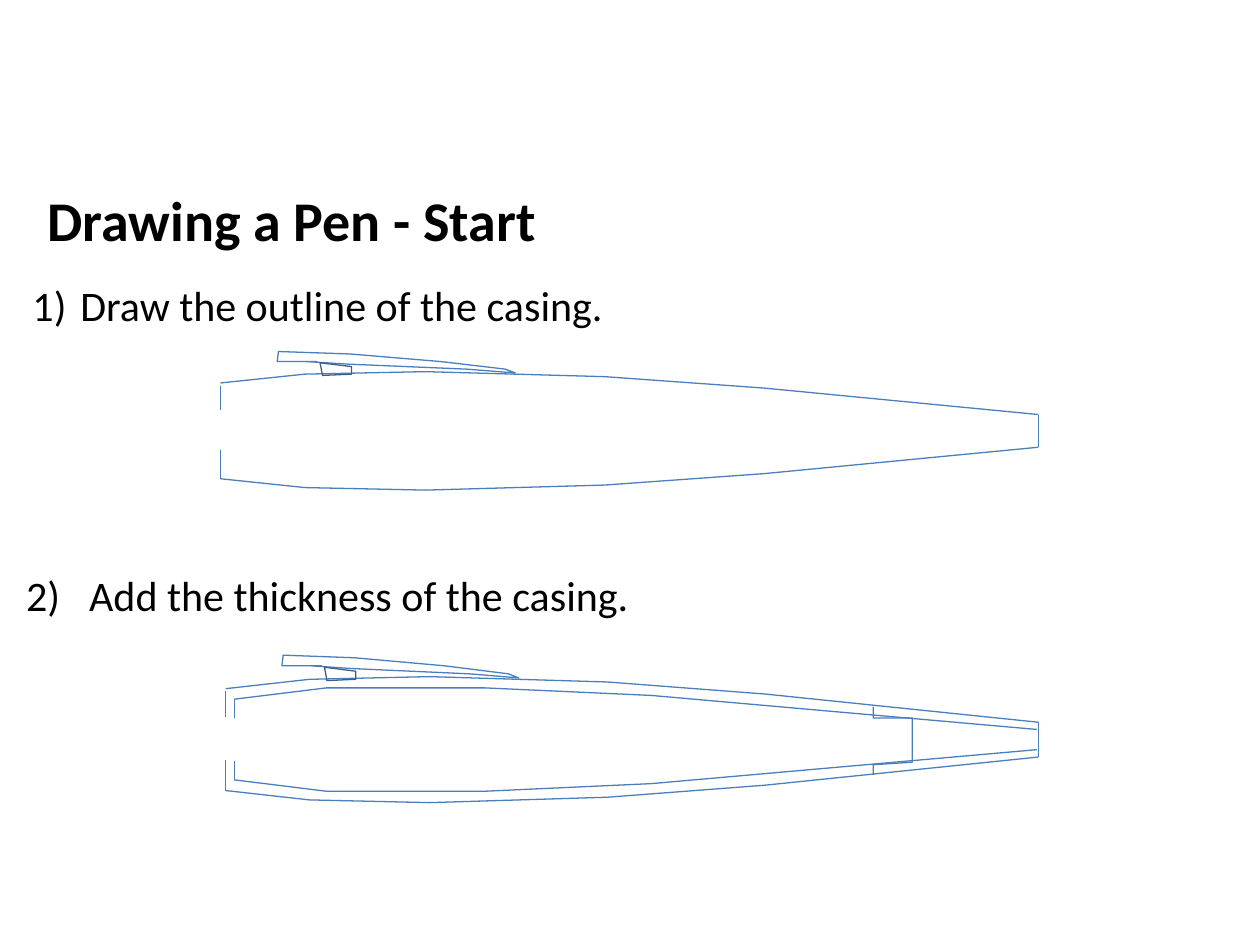
from dataclasses import dataclass

from lxml.etree import SubElement
from pptx import Presentation
from pptx.dml.color import RGBColor
from pptx.enum.shapes import MSO_CONNECTOR
from pptx.oxml.ns import qn
from pptx.util import Inches, Pt

FONT = "Calibri"
BLACK, CASING_BLUE, STUD_BLUE = "000000", "4B7EBC", "3A5F8C"
PEN_LENGTH, PEN_HEIGHT = 6.49, 0.94
Points = list[tuple[float, float]]

# Pen points in inches: x from the open end, y from the centre line.
OUTER_EDGE = [(0, -0.38), (0.67, -0.45), (1.63, -0.47), (3.05, -0.43), (4.31, -0.34), (6.49, -0.13)]
INNER_EDGE = [(0.07, -0.32), (0.8, -0.41), (2.06, -0.41), (3.38, -0.35), (6.44, -0.08)]
CLIP = [(0.68, -0.55), (1.01, -0.53), (1.95, -0.49), (2.34, -0.46), (2.26, -0.49),
        (1.75, -0.55), (1.03, -0.61), (0.46, -0.63), (0.45, -0.55), (0.77, -0.55)]
STUD = [(0.79, -0.54), (0.81, -0.44), (1.04, -0.45), (1.04, -0.51)]
OUTER_ENDS = [[(0, -0.36), (0, -0.17)], [(0, 0.15), (0, 0.38)], [(6.49, -0.13), (6.49, 0.13)]]
INNER_END = [(0.07, -0.32), (0.07, -0.17)]
TIP_INSERT = [(5.14, -0.26), (5.14, -0.17), (5.45, -0.17), (5.45, 0.18), (5.14, 0.2), (5.14, 0.28)]


@dataclass
class Frame:
    """Where a pen lies and how large it is, in inches."""
    left: float
    middle: float
    length: float = PEN_LENGTH
    height: float = PEN_HEIGHT

    def place(self, points: Points) -> list[tuple[int, int]]:
        return [(Inches(self.left + x * self.length / PEN_LENGTH),
                 Inches(self.middle + y * self.height / PEN_HEIGHT)) for x, y in points]


@dataclass
class Label:
    text: str
    left: float
    top: float
    width: float
    height: float
    size: int
    bold: bool = False
    number: int = 0
    indent: float = 0


LABELS = [
    Label("Drawing a Pen - Start", 0.28, 1.42, 7.09, 0.64, 32, bold=True),
    Label("Draw the outline of the casing.", 0.16, 2.17, 9.44, 0.5, 24, number=1, indent=0.38),
    Label("Add the thickness of the casing.", 0.11, 4.47, 9.43, 0.5, 24, number=2, indent=0.5),
]


def rgb(value: str) -> RGBColor:
    return RGBColor.from_string(value)


def mirrored(points: Points) -> Points:
    return [(x, -y) for x, y in points]


def add_label(slide, label: Label) -> None:
    box = slide.shapes.add_textbox(Inches(label.left), Inches(label.top),
                                   Inches(label.width), Inches(label.height))
    box.text_frame.word_wrap = True
    paragraph = box.text_frame.paragraphs[0]
    if label.number:
        paragraph.space_after = Pt(6)
        properties = paragraph._p.get_or_add_pPr()
        properties.set("marL", str(Inches(label.indent)))
        properties.set("indent", str(-Inches(label.indent)))
        SubElement(properties, qn("a:buFont"), typeface="+mj-lt")
        SubElement(properties, qn("a:buAutoNum"), type="arabicParenR", startAt=str(label.number))
    run = paragraph.add_run()
    run.text = label.text
    run.font.name = FONT
    run.font.size = Pt(label.size)
    run.font.bold = label.bold
    run.font.color.rgb = rgb(BLACK)


def style_line(shape, color: str) -> None:
    shape.line.color.rgb = rgb(color)
    shape.line.width = Pt(0.75)


def add_outline(slide, frame: Frame, points: Points, color: str = CASING_BLUE,
                close: bool = False) -> None:
    start, *rest = frame.place(points)
    builder = slide.shapes.build_freeform(*start)
    builder.add_line_segments(rest, close=close)
    shape = builder.convert_to_shape()
    shape.shadow.inherit = False
    shape.fill.background()
    style_line(shape, color)


def add_line(slide, frame: Frame, points: Points) -> None:
    start, end = frame.place(points)
    line = slide.shapes.add_connector(MSO_CONNECTOR.STRAIGHT, *start, *end)
    style_line(line, CASING_BLUE)
    SubElement(line._element.spPr, qn("a:effectLst"))


def add_pen(slide, frame: Frame) -> None:
    add_outline(slide, frame, OUTER_EDGE)
    add_outline(slide, frame, mirrored(OUTER_EDGE))
    add_outline(slide, frame, CLIP)
    add_outline(slide, frame, STUD, STUD_BLUE, close=True)
    for end in OUTER_ENDS:
        add_line(slide, frame, end)


def add_thickness(slide, frame: Frame) -> None:
    """Draw the inner wall of the casing and the insert at its tip."""
    for edge, end in ((INNER_EDGE, INNER_END), (mirrored(INNER_EDGE), mirrored(INNER_END))):
        add_outline(slide, frame, edge)
        add_line(slide, frame, end)
    add_outline(slide, frame, TIP_INSERT)


def main() -> None:
    presentation = Presentation()
    presentation.slide_width = Inches(10)
    presentation.slide_height = Inches(7.5)
    slide = presentation.slides.add_slide(presentation.slide_layouts[6])
    for label in LABELS:
        add_label(slide, label)
    add_pen(slide, Frame(1.75, 3.42))
    add_pen(slide, Frame(1.79, 5.87, length=6.45, height=1))
    add_thickness(slide, Frame(1.79, 5.87))
    presentation.save("out.pptx")


if __name__ == "__main__":
    main()
